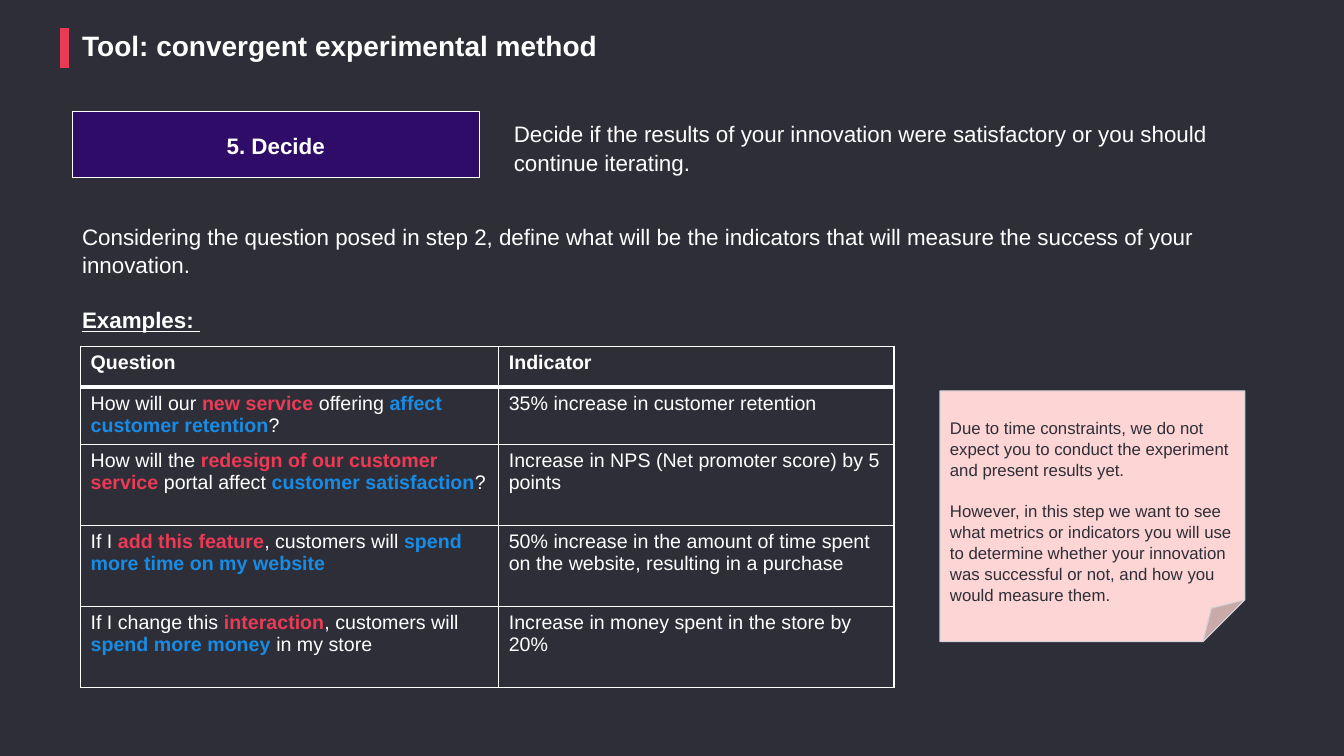
from dataclasses import dataclass
from lxml.etree import SubElement
from pptx import Presentation
from pptx.dml.color import RGBColor
from pptx.enum.shapes import MSO_CONNECTOR, MSO_SHAPE
from pptx.enum.text import MSO_ANCHOR, PP_ALIGN
from pptx.oxml import parse_xml
from pptx.oxml.ns import nsdecls, qn
from pptx.util import Cm, Pt


@dataclass(frozen=True)
class Theme:
    font: str = "Arial"
    background: str = "2E2E38"
    white: str = "FFFFFF"
    red: str = "EA3A55"
    blue: str = "188CE5"
    purple: str = "2E0C67"
    note: str = "FCD5D4"
    note_line: str = "D2D2DA"
    title_size: int = 20
    body_size: int = 16
    table_size: int = 14
    note_size: int = 12
    spacing: float = 1.05


theme = Theme()


def cause(text):
    return text, {"color": theme.red, "bold": True}


def effect(text):
    return text, {"color": theme.blue, "bold": True}


# A paragraph is a list of runs; a run is plain text or (text, format).
TITLE = [["Tool: convergent experimental method"]]
STEP = [["5. Decide"]]
STEP_GOAL = [["Decide if the results of your innovation were satisfactory "
              "or you should continue iterating."]]
INTRODUCTION = [
    ["Considering the question posed in step 2, define what will be the indicators "
     "that will measure the success of your innovation."],
    [("Examples: ", {"bold": True, "underline": True})],
]
HEADER = (["Question"], ["Indicator"])
EXAMPLES = [
    (["How will our ", cause("new service "), "offering ",
      effect("affect customer retention"), "?"],
     ["35% increase in customer retention"]),
    (["How will the", cause(" redesign of our customer service"), " portal affect ",
      effect("customer satisfaction"), "?"],
     ["Increase in NPS (Net promoter score) by 5 points"]),
    (["If I ", cause("add this feature"), ", customers will ",
      effect("spend more time on my website")],
     ["50% increase in the amount of time spent on the website, "
      "resulting in a purchase"]),
    (["If I change this ", cause("interaction"), ", customers will ",
      effect("spend more money"), " in my store"],
     ["Increase in money spent in the store by 20%"]),
]
NOTE = [
    ["Due to time constraints, we do not expect you to conduct the experiment "
     "and present results yet."],
    ["However, in this step we want to see what metrics or indicators you will use "
     "to determine whether your innovation was successful or not, and how you "
     "would measure them."],
]
COLUMN_WIDTHS = (10.54, 9.96)
ROW_HEIGHTS = (1.03, 1.45, 2.04, 2.04, 2.04)


def rgb(color):
    return RGBColor.from_string(color)


def write(frame, paragraphs, size=theme.body_size, color=theme.white, bold=False,
          align=PP_ALIGN.LEFT, anchor=MSO_ANCHOR.TOP, spacing=theme.spacing, gap=0):
    """Fill a text frame; gap is the space in points between paragraphs."""
    frame.word_wrap = True
    frame.vertical_anchor = anchor
    for index, runs in enumerate(paragraphs):
        paragraph = frame.add_paragraph() if index else frame.paragraphs[0]
        paragraph.alignment = align
        paragraph.line_spacing = spacing
        if index:
            paragraph.space_before = Pt(gap)
        for item in runs:
            text, style = (item, {}) if isinstance(item, str) else item
            run = paragraph.add_run()
            run.text = text
            font = run.font
            font.name = theme.font
            font.size = Pt(size)
            font.bold = style.get("bold", bold)
            font.underline = style.get("underline", False)
            font.color.rgb = rgb(style.get("color", color))


def add_text(slide, box, paragraphs, **text_format):
    shape = slide.shapes.add_textbox(*map(Cm, box))
    write(shape.text_frame, paragraphs, **text_format)


def add_panel(slide, kind, box, fill, line):
    shape = slide.shapes.add_shape(kind, *map(Cm, box))
    shape.shadow.inherit = False
    shape.fill.solid()
    shape.fill.fore_color.rgb = rgb(fill)
    shape.line.color.rgb = rgb(line)
    shape.line.width = Pt(0.75)
    return shape


def set_borders(cell, **widths):
    """Give each side (L, R, T, B) a white border of its width in points."""
    properties = cell._tc.get_or_add_tcPr()
    for position, (side, width) in enumerate(widths.items()):
        properties.insert(position, parse_xml(
            f'<a:ln{side} {nsdecls("a")} w="{Pt(width)}"><a:solidFill>'
            f'<a:srgbClr val="{theme.white}"/></a:solidFill></a:ln{side}>'))


def add_examples(slide, left, top):
    rows = [HEADER, *EXAMPLES]
    table = slide.shapes.add_table(
        len(rows), len(HEADER), Cm(left), Cm(top),
        Cm(sum(COLUMN_WIDTHS)), Cm(sum(ROW_HEIGHTS))).table
    table.first_row = table.horz_banding = False
    for column, width in zip(table.columns, COLUMN_WIDTHS):
        column.width = Cm(width)
    for index, (row, height, texts) in enumerate(zip(table.rows, ROW_HEIGHTS, rows)):
        row.height = Cm(height)
        for cell, runs in zip(row.cells, texts):
            cell.fill.background()
            set_borders(cell, L=1, R=1, T=3 if index == 1 else 1,
                        B=3 if index == 0 else 1)
            write(cell.text_frame, [runs], size=theme.table_size,
                  bold=index == 0, spacing=1.0)


def add_title_bar(slide, x, top, bottom):
    bar = slide.shapes.add_connector(
        MSO_CONNECTOR.STRAIGHT, Cm(x), Cm(top), Cm(x), Cm(bottom))
    bar.line.color.rgb = rgb(theme.red)
    bar.line.width = Pt(6)
    SubElement(bar._element.spPr, qn("a:effectLst"))


def main():
    presentation = Presentation()
    presentation.slide_width, presentation.slide_height = Cm(33.87), Cm(19.05)
    slide = presentation.slides.add_slide(presentation.slide_layouts[6])
    slide.background.fill.solid()
    slide.background.fill.fore_color.rgb = rgb(theme.background)

    add_title_bar(slide, 1.63, 0.71, 1.71)
    add_text(slide, (1.82, 0.56, 19.76, 1.12), TITLE,
             size=theme.title_size, bold=True)

    step = add_panel(slide, MSO_SHAPE.RECTANGLE, (1.82, 2.82, 10.26, 1.66),
                     theme.purple, theme.white)
    write(step.text_frame, STEP, bold=True, align=PP_ALIGN.CENTER,
          anchor=MSO_ANCHOR.MIDDLE)
    add_text(slide, (12.7, 2.88, 19.35, 1.63), STEP_GOAL)

    add_text(slide, (1.82, 5.47, 30.23, 3), INTRODUCTION, gap=19)
    add_examples(slide, 2.03, 8.73)

    note = add_panel(slide, MSO_SHAPE.FOLDED_CORNER, (23.69, 9.85, 7.68, 6.32),
                     theme.note, theme.note_line)
    note.text_frame.margin_top = Cm(0.64)
    write(note.text_frame, NOTE, size=theme.note_size, color=theme.background, gap=14)

    presentation.save("out.pptx")


if __name__ == "__main__":
    main()
